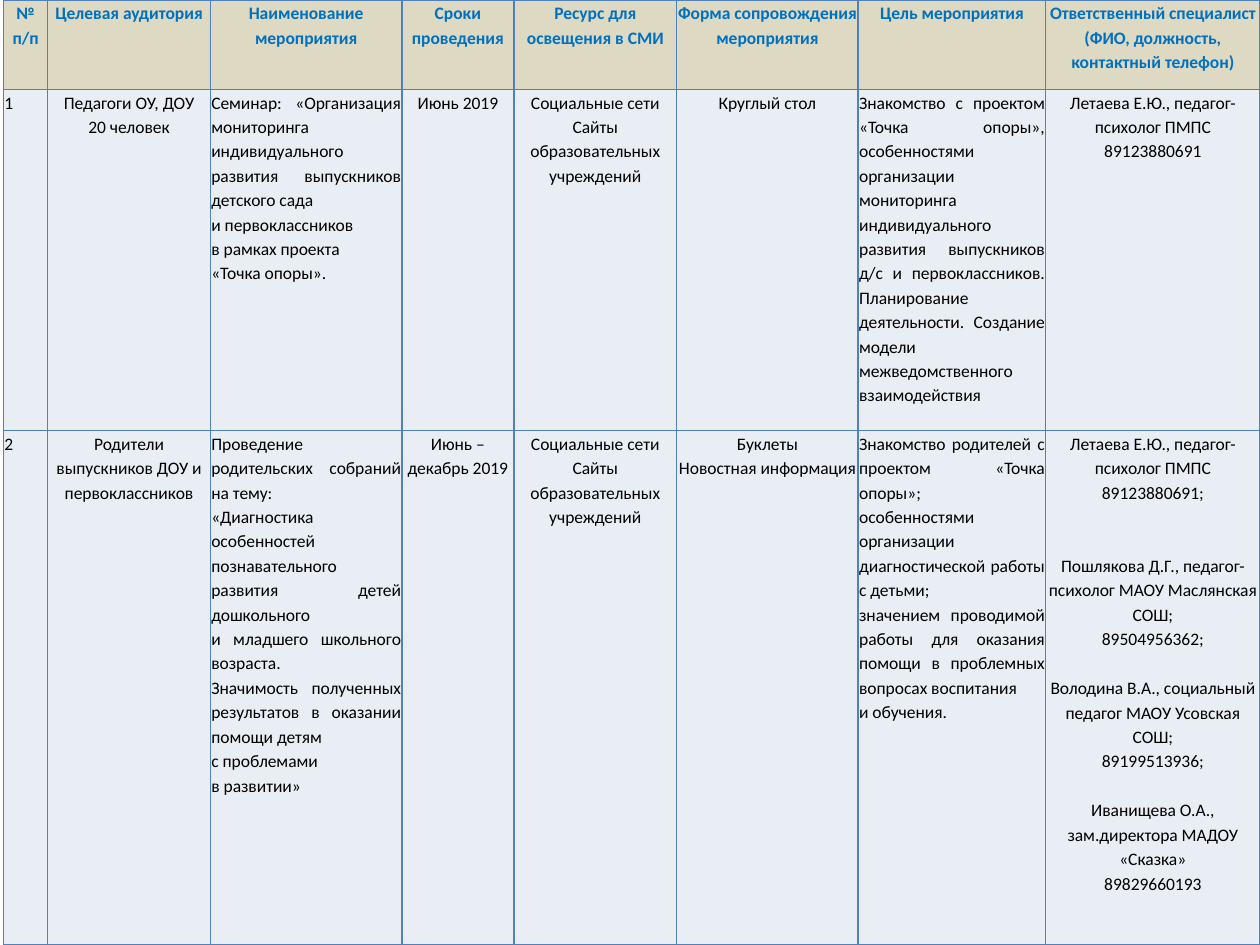
import pptx
import pptx.dml.color
import pptx.enum.text
import pptx.oxml.ns
import pptx.util
from lxml import etree

Cm, Pt = pptx.util.Cm, pptx.util.Pt
ALIGN = pptx.enum.text.PP_ALIGN

COLORS = {
    "header_fill": "DDD9C3",
    "header_text": "0070C0",
    "body_fill": "E9EDF4",
    "body_text": "000000",
    "border": "4F81BD",
}
FONT = "Calibri"
LINE = 14  # height of one text line, points

COL_WIDTHS = [0.89, 3.28, 3.86, 2.26, 3.28, 3.66, 3.78, 4.32]
ROW_HEIGHTS = [1.8, 6.88, 10.37]
BODY_ALIGN = [ALIGN.LEFT, ALIGN.CENTER, ALIGN.JUSTIFY, ALIGN.CENTER,
              ALIGN.CENTER, ALIGN.CENTER, ALIGN.JUSTIFY, ALIGN.CENTER]

MEDIA = "Социальные сети\nСайты образовательных учреждений"
PSYCHOLOGIST = "Летаева Е.Ю., педагог-психолог ПМПС\n89123880691"

HEADER = [
    "№\nп/п",
    "Целевая аудитория",
    "Наименование мероприятия",
    "Сроки проведения",
    "Ресурс для освещения в СМИ",
    "Форма сопровождения мероприятия",
    "Цель мероприятия",
    "Ответственный специалист (ФИО, должность, контактный телефон)",
]
EVENTS = [
    [
        "1",
        "Педагоги ОУ, ДОУ\n20 человек",
        "Семинар: «Организация мониторинга индивидуального развития "
        "выпускников детского сада\nи первоклассников\n"
        "в рамках проекта\n«Точка опоры».",
        "Июнь 2019",
        MEDIA,
        "Круглый стол",
        "Знакомство с проектом «Точка опоры», особенностями организации "
        "мониторинга индивидуального развития выпускников д/с и "
        "первоклассников. Планирование деятельности. Создание модели "
        "межведомственного взаимодействия",
        PSYCHOLOGIST,
    ],
    [
        "2",
        "Родители выпускников ДОУ и первоклассников",
        "Проведение родительских собраний на тему:\n"
        "«Диагностика особенностей познавательного развития детей "
        "дошкольного\nи младшего школьного возраста.\n"
        "Значимость полученных результатов в оказании помощи детям\n"
        "с проблемами\nв развитии»",
        "Июнь – декабрь 2019",
        MEDIA,
        "Буклеты\nНовостная информация",
        "Знакомство родителей с проектом «Точка опоры»;\n"
        "особенностями организации диагностической работы с детьми;\n"
        "значением проводимой работы для оказания помощи в проблемных "
        "вопросах воспитания\nи обучения.",
        PSYCHOLOGIST + ";\n"
        "Пошлякова Д.Г., педагог-психолог МАОУ Маслянская СОШ;\n"
        "89504956362;\n"
        "Володина В.А., социальный педагог МАОУ Усовская СОШ;\n"
        "89199513936;\n"
        "Иванищева О.А., зам.директора МАДОУ «Сказка»\n"
        "89829660193",
    ],
]
# Space in lines before the paragraph that opens each further contact
CONTACT_GAPS = {2: 2, 4: 1, 6: 1}


def rgb(name):
    return pptx.dml.color.RGBColor.from_string(COLORS[name])


def set_borders(cell):
    tc_pr = cell._tc.get_or_add_tcPr()
    qn = pptx.oxml.ns.qn
    for side in ("lnL", "lnR", "lnT", "lnB"):
        ln = etree.SubElement(tc_pr, qn("a:" + side), w=str(Pt(1)))
        fill = etree.SubElement(ln, qn("a:solidFill"))
        etree.SubElement(fill, qn("a:srgbClr"), val=COLORS["border"])


def fill_cell(cell, text, kind, align, gaps):
    """Write and format one cell; kind is "header" or "body"."""
    set_borders(cell)
    cell.fill.solid()
    cell.fill.fore_color.rgb = rgb(kind + "_fill")
    cell.margin_left = cell.margin_right = Cm(0.02)
    cell.margin_top = cell.margin_bottom = 0
    tf = cell.text_frame
    tf.text = text
    for i, p in enumerate(tf.paragraphs):
        p.alignment = align
        p.line_spacing = 1.15
        if i in gaps:
            p.space_before = Pt(gaps[i] * LINE)
        for r in p.runs:
            r.font.name = FONT
            r.font.size = Pt(10)
            r.font.bold = kind == "header"
            r.font.color.rgb = rgb(kind + "_text")


def add_event_table(slide, left, top, width, height):
    rows = [HEADER] + EVENTS
    table = slide.shapes.add_table(
        len(rows), len(HEADER), left, top, width, height).table
    for column, size in zip(table.columns, COL_WIDTHS):
        column.width = Cm(size)
    for row, size in zip(table.rows, ROW_HEIGHTS):
        row.height = Cm(size)
    for i, texts in enumerate(rows):
        kind = "body" if i else "header"
        for j, text in enumerate(texts):
            align = BODY_ALIGN[j] if i else ALIGN.CENTER
            gaps = CONTACT_GAPS if j == len(texts) - 1 else {}
            fill_cell(table.cell(i, j), text, kind, align, gaps)


def main():
    prs = pptx.Presentation()
    prs.slide_width, prs.slide_height = Cm(25.4), Cm(19.05)
    slide = prs.slides.add_slide(prs.slide_layouts[6])
    add_event_table(slide, Cm(0.07), 0, Cm(sum(COL_WIDTHS)),
                    Cm(sum(ROW_HEIGHTS)))
    prs.save("out.pptx")


if __name__ == "__main__":
    main()
